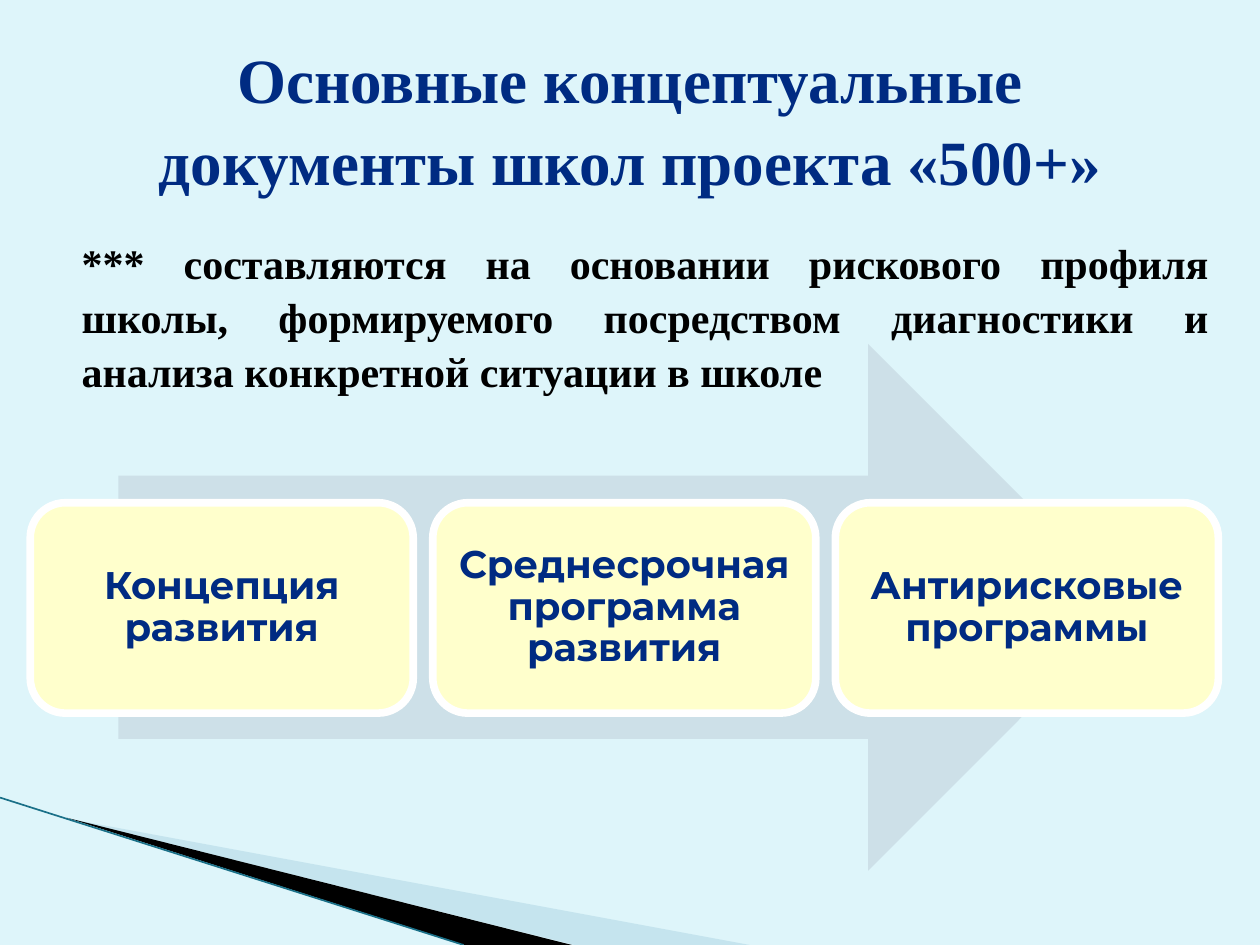
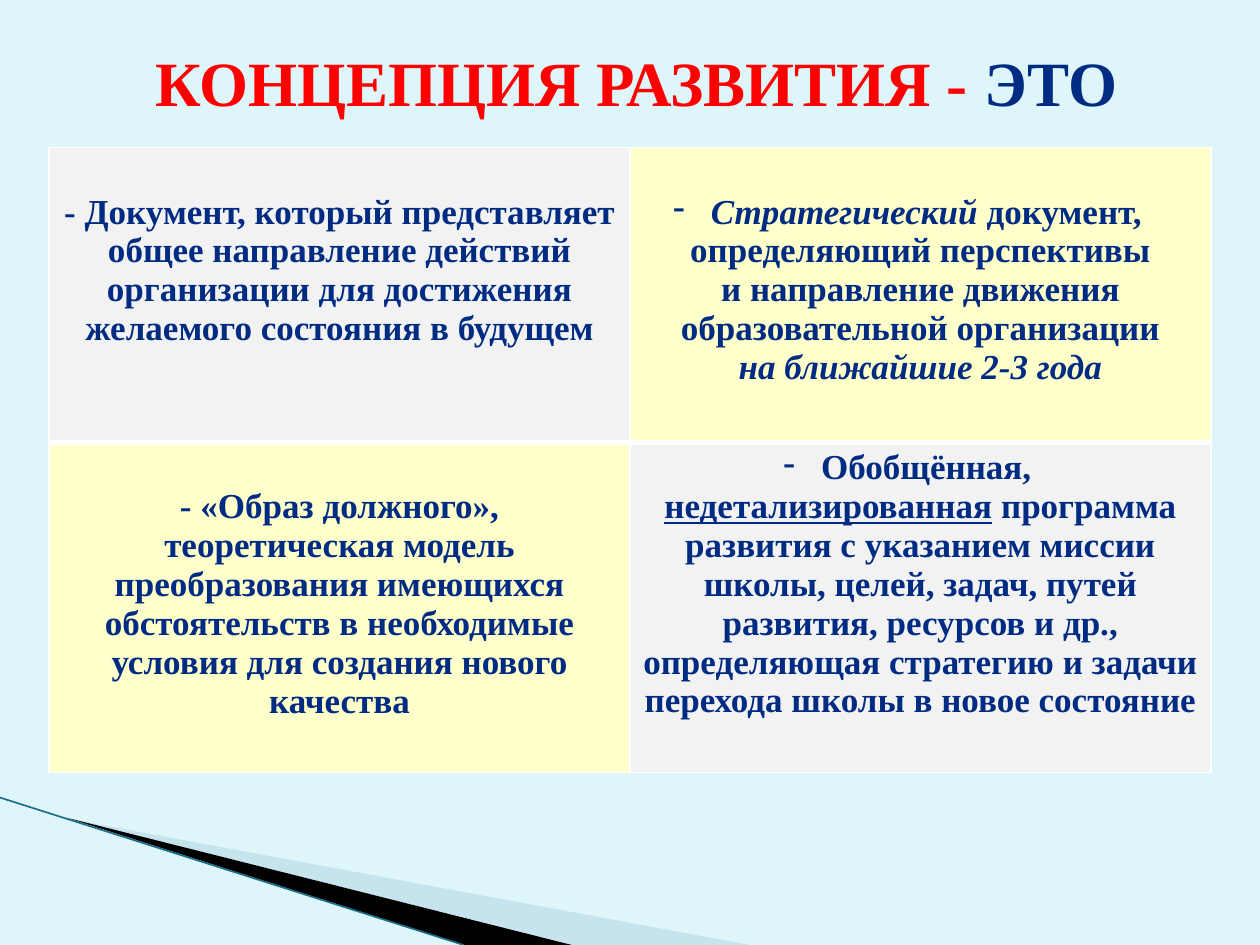
from dataclasses import dataclass

from lxml import etree
from pptx import Presentation
from pptx import util as u
from pptx.dml.color import RGBColor
from pptx.enum import shapes, text
from pptx.oxml.ns import qn

# Grid of 100 columns by 75 rows; one cell is a tenth of an inch
COLUMNS, ROWS = 100, 75
CELL = u.Inches(10) // COLUMNS


@dataclass(frozen=True)
class Theme:
    background: str = "DEF5FA"
    navy: str = "002B82"
    red: str = "FF0000"
    black: str = "000000"
    white: str = "FFFFFF"
    cream: str = "FFFFCC"
    grey: str = "F2F2F2"
    arrow: str = "CDE0E8"
    wedge: str = "A0CBDC"
    edge: str = "1A7088"
    serif: str = "Times New Roman"
    sans: str = "Montserrat"
    title_size: int = 36
    body_size: int = 24
    card_size: int = 22
    cell_size: int = 20
    loose: float = 1.08


THEME = Theme()


def grid(*cells):
    """Turn grid cells into slide lengths."""
    return [u.Emu(round(cell * CELL)) for cell in cells]


def paint(fill, color):
    fill.solid()
    fill.fore_color.rgb = RGBColor.from_string(color)


def format_run(run, size, color=THEME.navy, face=THEME.serif):
    run.font.size = u.Pt(size)
    run.font.name = face
    run.font.bold = True
    run.font.color.rgb = RGBColor.from_string(color)


def write(frame, words, size, align, color=THEME.navy, face=THEME.serif, spacing=None):
    frame.text = words
    frame.word_wrap = True
    paragraph = frame.paragraphs[0]
    paragraph.alignment = align
    paragraph.line_spacing = spacing
    format_run(paragraph.runs[0], size, color, face)


# Shared slide parts

def add_wedge(slide, points, color, alpha=None):
    start, *rest = [grid(*point) for point in points]
    builder = slide.shapes.build_freeform(*start)
    builder.add_line_segments(rest, close=True)
    wedge = builder.convert_to_shape()
    wedge.shadow.inherit = False
    wedge.line.fill.background()
    paint(wedge.fill, color)
    if alpha:
        tint = wedge.fill._xPr.find(".//" + qn("a:srgbClr"))
        etree.SubElement(tint, qn("a:alpha"), val=str(alpha * 1000))


def add_corner(slide):
    add_wedge(slide, [(5.5, 65), (59.5, ROWS), (45.6, ROWS)], THEME.wedge, alpha=40)
    add_wedge(slide, [(5.3, 64.9), (45.4, ROWS), (36.9, ROWS)], THEME.black)
    edge = slide.shapes.add_connector(
        shapes.MSO_CONNECTOR.STRAIGHT, *grid(0, 63.3, 36.8, ROWS))
    edge.line.color.rgb = RGBColor.from_string(THEME.edge)
    edge.line.width = u.Pt(0.95)
    etree.SubElement(edge._element.spPr, qn("a:effectLst"))


def add_titled_slide(prs, left, top, parts):
    slide = prs.slides.add_slide(prs.slide_layouts[5])
    add_corner(slide)
    title = slide.shapes.title
    title.left, title.top, title.width, title.height = grid(left, top, 90, 12.5)
    title.text_frame.vertical_anchor = text.MSO_ANCHOR.MIDDLE
    heading = title.text_frame.paragraphs[0]
    heading.alignment = text.PP_ALIGN.CENTER
    heading.line_spacing = THEME.loose
    for words, color in parts:
        run = heading.add_run()
        run.text = words
        format_run(run, THEME.title_size, color)
    return slide


# Documents slide

def add_block(slide, kind, place, color):
    block = slide.shapes.add_shape(kind, *grid(*place))
    block.shadow.inherit = False
    paint(block.fill, color)
    block.line.fill.background()
    return block


def add_cards(slide, labels):
    for column, label in enumerate(labels):
        card = add_block(slide, shapes.MSO_SHAPE.ROUNDED_RECTANGLE,
                         (2.4 + 31.95 * column, 39.9, 30.4, 16.7), THEME.cream)
        paint(card.line.fill, THEME.white)
        card.line.width = u.Pt(4.33)
        frame = card.text_frame
        frame.margin_left = frame.margin_right = u.Inches(0.05)
        frame.vertical_anchor = text.MSO_ANCHOR.MIDDLE
        write(frame, label, THEME.card_size, text.PP_ALIGN.CENTER,
              face=THEME.sans, spacing=0.9)


def build_documents(prs):
    slide = add_titled_slide(prs, 5, 3, [
        ("Основные концептуальные документы школ проекта «500+»", THEME.navy)])
    add_block(slide, shapes.MSO_SHAPE.RIGHT_ARROW, (9.4, 27.3, 80.4, 41.8), THEME.arrow)
    add_cards(slide, ["Концепция развития", "Среднесрочная программа развития",
                      "Антирисковые программы"])
    basis = slide.shapes.add_textbox(*grid(5.5, 18, 91.4, 13.1))
    write(basis.text_frame,
          "*** составляются на основании рискового профиля школы, формируемого "
          "посредством диагностики и анализа конкретной ситуации в школе",
          THEME.body_size, text.PP_ALIGN.JUSTIFY, THEME.black, spacing=THEME.loose)


# Concept slide: each cell holds paragraphs of (words, style) runs

DEFINITIONS = [
    [
        [[("- Документ, который представляет общее направление действий организации "
           "для достижения желаемого состояния в будущем", "")]],
        [[("Стратегический ", "italic"), ("документ, определяющий перспективы", "")],
         [("и направление движения образовательной организации", "")],
         [("на ближайшие 2-3 года", "italic")]],
    ],
    [
        [[("- «Образ должного», теоретическая модель преобразования имеющихся "
           "обстоятельств в необходимые условия для создания нового качества", "")]],
        [[("Обобщённая,", "")],
         [("недетализированная", "underline"),
          (" программа развития с указанием миссии школы, целей, задач, путей развития, "
           "ресурсов и др., определяющая стратегию и задачи перехода школы в новое "
           "состояние", "")]],
    ],
]


def add_dash(paragraph):
    props = paragraph._p.get_or_add_pPr()
    props.set("marL", "0")
    props.set("indent", str(-u.Inches(0.3)))
    etree.SubElement(props, qn("a:buFontTx"))
    etree.SubElement(props, qn("a:buChar"), char="-")


def set_borders(cell, widths):
    props = cell._tc.get_or_add_tcPr()
    for side, width in widths.items():
        border = etree.SubElement(props, qn(f"a:ln{side}"), w=str(u.Pt(width)))
        fill = etree.SubElement(border, qn("a:solidFill"))
        etree.SubElement(fill, qn("a:srgbClr"), val=THEME.white)


def fill_cell(cell, paragraphs, dashed):
    frame = cell.text_frame
    for index, runs in enumerate(paragraphs):
        paragraph = frame.add_paragraph() if index else frame.paragraphs[0]
        paragraph.alignment = text.PP_ALIGN.CENTER
        if dashed and index == 0:
            add_dash(paragraph)
        for words, style in runs:
            run = paragraph.add_run()
            run.text = words
            format_run(run, THEME.cell_size)
            if style:
                setattr(run.font, style, True)


def add_definitions(slide):
    frame = slide.shapes.add_table(2, 2, *grid(3.9, 11.7, 92.2, 49.6))
    table = frame.table
    table.first_row = table.horz_banding = False
    for row, height in zip(table.rows, grid(23.4, 26.2)):
        row.height = height
    for r, row in enumerate(DEFINITIONS):
        for c, paragraphs in enumerate(row):
            cell = table.cell(r, c)
            middle = {"T": 3, "B": 1} if r else {"T": 1, "B": 3}
            set_borders(cell, {"L": 1, "R": 1, **middle})
            paint(cell.fill, THEME.grey if r == c else THEME.cream)
            cell.margin_top = u.Inches(0.05 if r and c else 0.36)
            fill_cell(cell, paragraphs, dashed=c == 1)


def build_concept(prs):
    slide = add_titled_slide(prs, 5.5, 0, [
        ("КОНЦЕПЦИЯ РАЗВИТИЯ - ", THEME.red), ("ЭТО", THEME.navy)])
    add_definitions(slide)


def main():
    prs = Presentation()
    prs.slide_width, prs.slide_height = grid(COLUMNS, ROWS)
    paint(prs.slide_master.background.fill, THEME.background)
    build_documents(prs)
    build_concept(prs)
    prs.save("out.pptx")


if __name__ == "__main__":
    main()
